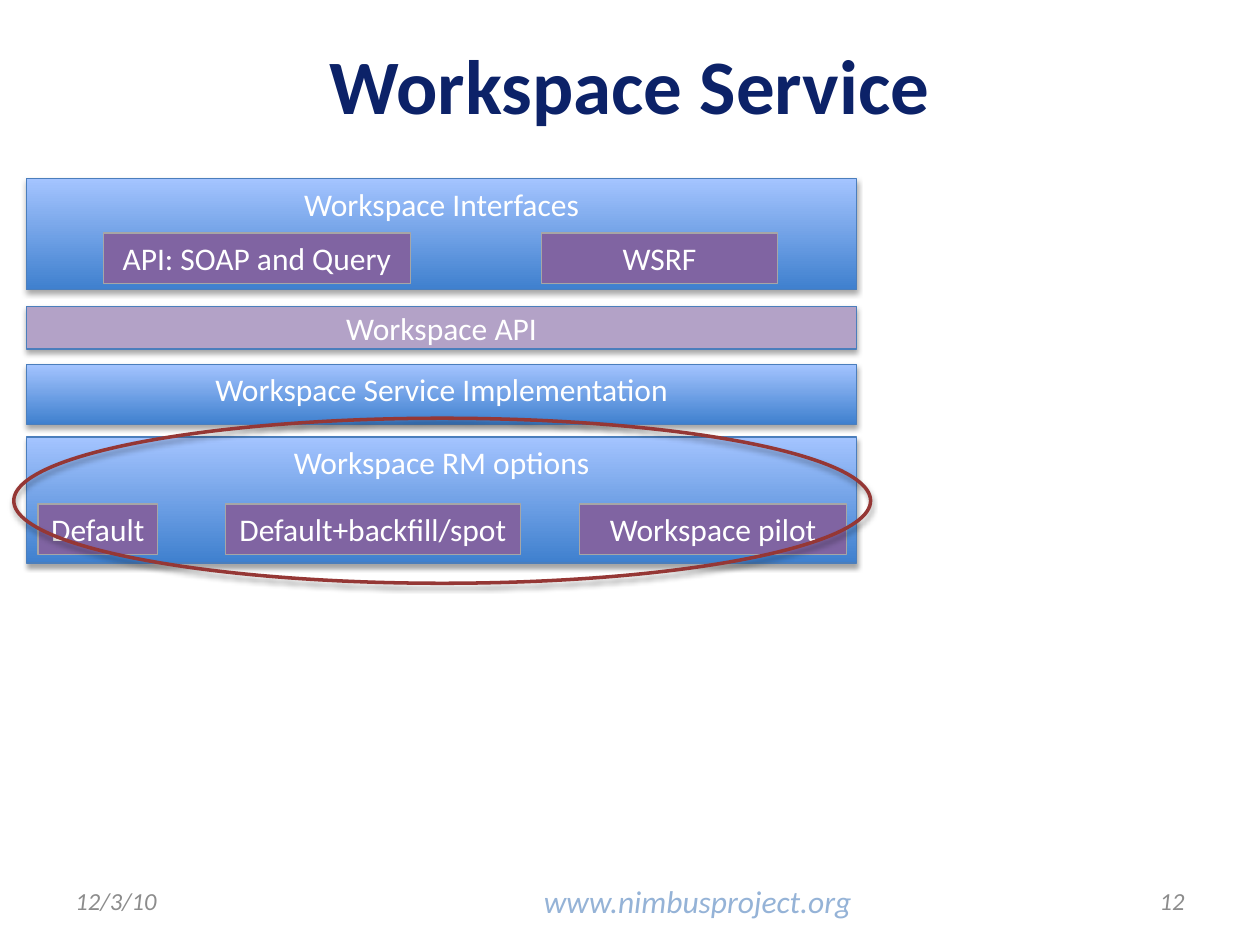
from dataclasses import dataclass

import pptx
import pptx.dml.color
import pptx.enum.shapes
import pptx.enum.text
import pptx.oxml
import pptx.oxml.ns
import pptx.util

Pt = pptx.util.Pt
ALIGN = pptx.enum.text.PP_ALIGN
ANCHOR = pptx.enum.text.MSO_ANCHOR
SHAPE = pptx.enum.shapes.MSO_SHAPE

COLORS = {
    "title": "0C2268", "footer": "8C8C8C", "site": "95B3D7", "white": "FFFFFF",
    "band_dark": "3F80CE", "band_light": "A4C4FF", "band_line": "4B7EBC",
    "api": "B3A2C7", "chip": "8064A2", "chip_line": "A6A6A6", "ring": "953735",
}
BAND_LEFT, BAND_WIDTH = 15.12, 474.5
CHIP_HEIGHT = 29


@dataclass
class Chip:
    text: str
    left: float
    width: float
    wrap: bool = True


@dataclass
class Band:
    text: str
    top: float
    height: float
    chips: tuple[Chip, ...] = ()
    chip_top: float = 0
    flat: bool = False


@dataclass
class Label:
    text: str
    box: tuple[float, float, float, float]
    size: float
    color: str
    align: ALIGN = ALIGN.LEFT
    anchor: ANCHOR = ANCHOR.MIDDLE
    bold: bool = False
    italic: bool = False
    wrap: bool = True


BANDS = [
    Band("Workspace RM options", 249.8, 72, (
        Chip("Default", 21.8, 68.2, wrap=False),
        Chip("Workspace pilot", 331.2, 152.6),
        Chip("Default+backfill/spot", 128.8, 168.6, wrap=False),
    ), chip_top=288),
    Band("Workspace API", 175, 24.5, flat=True),
    Band("Workspace Service Implementation", 208.1, 34.5),
    Band("Workspace Interfaces", 102.2, 63.4, (
        Chip("API: SOAP and Query", 59, 175.7, wrap=False),
        Chip("WSRF", 309.6, 134.6),
    ), chip_top=133.2),
]

LABELS = [
    Label("www.nimbusproject.org", (303.8, 500.4, 196.6, 29), 18, "site",
          anchor=ANCHOR.TOP, italic=True, wrap=False),
    Label("12/3/10", (36, 500.4, 168, 28.8), 14, "footer", italic=True),
    Label("12", (516, 500.4, 168, 28.8), 14, "footer", ALIGN.RIGHT, italic=True),
    Label("Workspace Service", (36, 2.9, 648, 90), 44, "title", ALIGN.CENTER, bold=True),
]


def rgb(name: str) -> pptx.dml.color.RGBColor:
    return pptx.dml.color.RGBColor.from_string(COLORS[name])


def set_text(sp, text: str, size: float, color: str, align: ALIGN,
             anchor: ANCHOR, wrap: bool = True):
    tf = sp.text_frame
    tf.word_wrap = wrap
    tf.vertical_anchor = anchor
    p = tf.paragraphs[0]
    p.text = text
    p.alignment = align
    p.font.name = "Calibri"
    p.font.size = Pt(size)
    p.font.color.rgb = rgb(color)
    return p


def add_outline(slide, kind: SHAPE, box: tuple, line: str, width: float):
    sp = slide.shapes.add_shape(kind, *map(Pt, box))
    sp.line.color.rgb = rgb(line)
    sp.line.width = Pt(width)
    sp.shadow.inherit = False
    return sp


def add_shadow(sp) -> None:
    effects = sp._element.spPr.find(pptx.oxml.ns.qn("a:effectLst"))
    effects.append(pptx.oxml.parse_xml(
        f'<a:outerShdw {pptx.oxml.ns.nsdecls("a")} blurRad="{Pt(3.1)}" dist="{Pt(1.8)}" '
        'dir="5400000" rotWithShape="0"><a:srgbClr val="000000">'
        '<a:alpha val="35000"/></a:srgbClr></a:outerShdw>'))


def add_chip(slide, chip: Chip, top: float) -> None:
    sp = add_outline(slide, SHAPE.RECTANGLE,
                     (chip.left, top, chip.width, CHIP_HEIGHT), "chip_line", 0.75)
    sp.fill.solid()
    sp.fill.fore_color.rgb = rgb("chip")
    set_text(sp, chip.text, 18, "white", ALIGN.CENTER, ANCHOR.TOP, chip.wrap)


def add_band(slide, band: Band) -> None:
    sp = add_outline(slide, SHAPE.RECTANGLE,
                     (BAND_LEFT, band.top, BAND_WIDTH, band.height), "band_line", 0.75)
    if band.flat:
        sp.fill.solid()
        sp.fill.fore_color.rgb = rgb("api")
    else:
        sp.fill.gradient()
        sp.fill.gradient_angle = 90
        for stop, name, pos in zip(sp.fill.gradient_stops, ("band_dark", "band_light"), (0, 1)):
            stop.color.rgb = rgb(name)
            stop.position = pos
    add_shadow(sp)
    set_text(sp, band.text, 18, "white", ALIGN.CENTER,
             ANCHOR.MIDDLE if band.flat else ANCHOR.TOP)
    for chip in band.chips:
        add_chip(slide, chip, band.chip_top)


def add_label(slide, label: Label) -> None:
    sp = slide.shapes.add_textbox(*map(Pt, label.box))
    p = set_text(sp, label.text, label.size, label.color, label.align,
                 label.anchor, label.wrap)
    p.font.bold = label.bold
    p.font.italic = label.italic


def main() -> None:
    prs = pptx.Presentation()
    prs.slide_width, prs.slide_height = Pt(720), Pt(540)
    slide = prs.slides.add_slide(prs.slide_layouts[6])

    # Title and footer
    for label in LABELS:
        add_label(slide, label)

    # Service layers
    for band in BANDS:
        add_band(slide, band)

    # Ring around the resource manager options
    ring = add_outline(slide, SHAPE.OVAL, (7.9, 239, 489.6, 94.3), "ring", 2)
    ring.fill.background()
    add_shadow(ring)

    prs.save("out.pptx")


if __name__ == "__main__":
    main()
